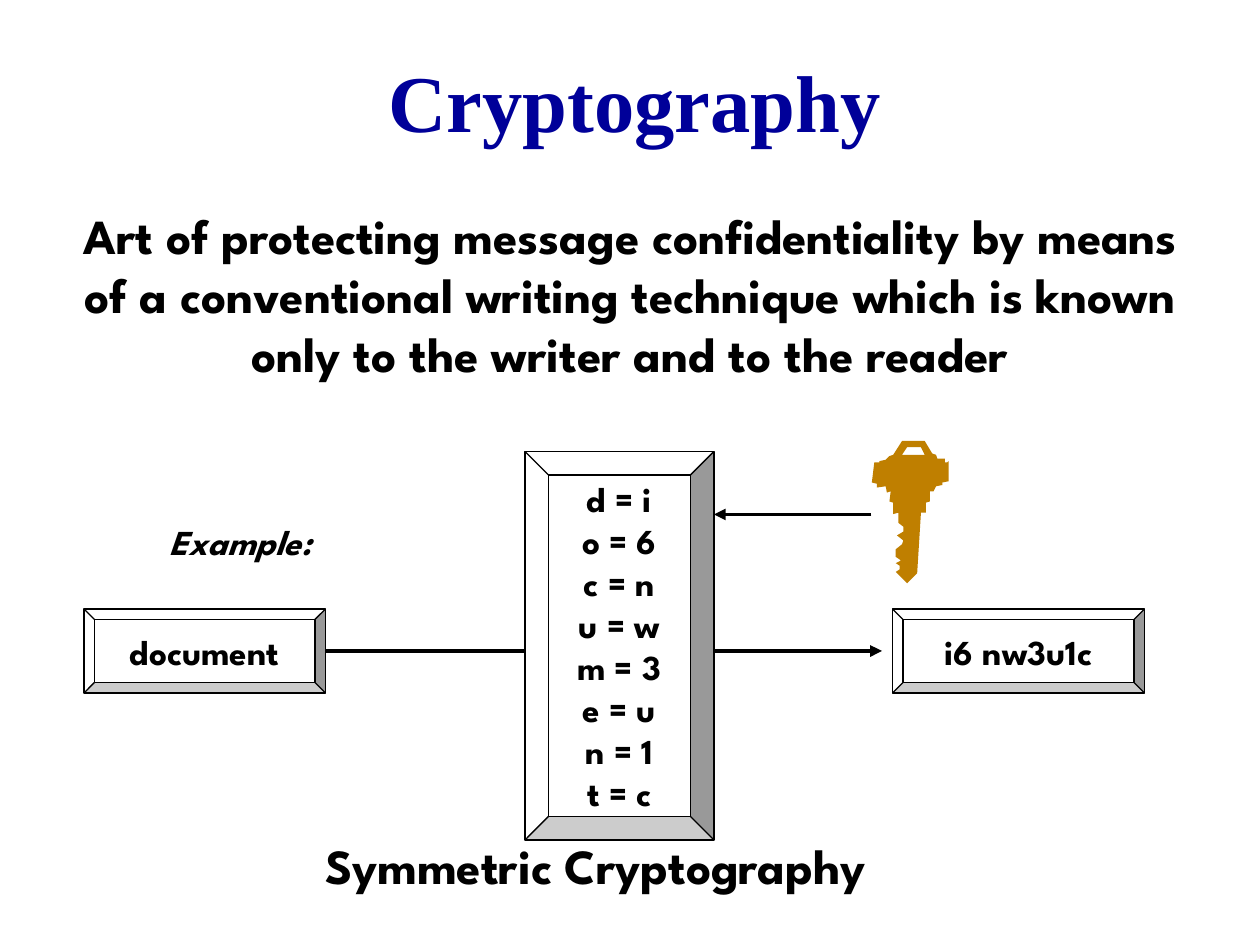
from lxml import etree
from pptx import Presentation
from pptx.dml.color import RGBColor
from pptx.enum.shapes import MSO_CONNECTOR, MSO_SHAPE
from pptx.enum.text import MSO_ANCHOR, MSO_AUTO_SIZE, PP_ALIGN
from pptx.oxml.ns import qn
from pptx.util import Pt

BLACK = RGBColor(0x00, 0x00, 0x00)
WHITE = RGBColor(0xFF, 0xFF, 0xFF)
NAVY = RGBColor(0x00, 0x00, 0x99)
GOLD = RGBColor(0xBF, 0x7F, 0x00)
LEFT, CENTER = PP_ALIGN.LEFT, PP_ALIGN.CENTER
TOP, MIDDLE = MSO_ANCHOR.TOP, MSO_ANCHOR.MIDDLE
NO_FIT = MSO_AUTO_SIZE.NONE
STRAIGHT, BEVEL = MSO_CONNECTOR.STRAIGHT, MSO_SHAPE.BEVEL


def write(sp, text, size=20, font="League Spartan", color=BLACK, italic=False,
          align=CENTER, anchor=TOP, wrap=False):
    """Fill a shape with text, one paragraph per line."""
    tf = sp.text_frame
    tf.auto_size = NO_FIT
    tf.word_wrap = wrap
    tf.vertical_anchor = anchor
    for i, line in enumerate(text.split("\n")):
        p = tf.add_paragraph() if i else tf.paragraphs[0]
        p.alignment = align
        r = p.add_run()
        r.text = line
        r.font.size = Pt(size)
        r.font.name = font
        r.font.bold = True
        r.font.italic = italic
        r.font.color.rgb = color


prs = Presentation()
prs.slide_width, prs.slide_height = Pt(720), Pt(540)
s = prs.slides.add_slide(prs.slide_layouts[5])

# Title
title = s.shapes.title
title.left, title.top, title.width, title.height = Pt(214.6), Pt(26), Pt(296), Pt(62.6)
write(title, "Cryptography", size=46, font="Times New Roman", color=NAVY)

# Key, outlined on a grid of 0.72 pt; the hole in its bow is part of the outline
KEY = [
    (24, 0), (42, 0), (39, 5), (28, 5), (24, 11), (42, 11), (39, 5), (42, 0),
    (48, 10), (51, 11), (52, 14), (58, 14), (58, 17), (60, 17), (61, 16), (61, 32),
    (56, 33), (56, 35), (51, 36), (49, 40), (46, 40), (46, 48), (43, 49), (43, 57),
    (39, 57), (36, 105), (28, 113), (19, 104), (22, 102), (22, 99), (19, 97),
    (23, 95), (22, 94), (19, 92), (19, 86), (24, 82), (25, 79), (20, 75), (25, 72),
    (25, 68), (21, 65), (21, 57), (17, 58), (17, 49), (14, 48), (15, 40), (12, 41),
    (11, 36), (4, 37), (4, 34), (0, 33), (2, 17), (6, 17), (6, 16), (11, 15),
    (12, 14), (14, 12), (17, 11),
]
outline = s.shapes.build_freeform(*KEY[0], scale=Pt(0.72))
outline.add_line_segments(KEY[1:], close=True)
key = outline.convert_to_shape(Pt(498.2), Pt(252))
key.shadow.inherit = False
key.fill.solid()
key.fill.fore_color.rgb = GOLD
key.line.fill.background()

# Arrows: document to cipher text (behind the table box), key to table
for x1, x2, y in [(186, 504, 372), (498, 408, 294)]:
    arrow = s.shapes.add_connector(STRAIGHT, Pt(x1), Pt(y), Pt(x2), Pt(y))
    arrow.line.color.rgb = BLACK
    arrow.line.width = Pt(2.25)
    etree.SubElement(arrow.line._get_or_add_ln(), qn("a:tailEnd"), type="triangle")
    etree.SubElement(arrow._element.spPr, qn("a:effectLst"))

# Bevelled boxes: plain text, substitution table, cipher text
BOXES = [
    ("document", 48, 348, 138, 48),
    ("d = i\no = 6\nc = n\nu = w\nm = 3\ne = u\nn = 1\nt = c", 300, 258, 108, 222),
    ("i6 nw3u1c", 510, 348, 144, 48),
]
for text, x, y, w, h in BOXES:
    box = s.shapes.add_shape(BEVEL, Pt(x), Pt(y), Pt(w), Pt(h))
    box.shadow.inherit = False
    box.fill.solid()
    box.fill.fore_color.rgb = WHITE
    box.line.color.rgb = BLACK
    box.line.width = Pt(0.75)
    write(box, text, anchor=MIDDLE)

# Definition, example label and caption
DEFINITION = ("Art of protecting message confidentiality by means of a conventional "
              "writing technique which is known only to the writer and to the reader")
LABELS = [
    (DEFINITION, 30, 114, 660, 142, dict(size=28, wrap=True)),
    ("Example:", 90, 294, 114, 31, dict(italic=True, align=LEFT, wrap=True)),
    ("Symmetric Cryptography", 178.8, 474, 357, 41, dict(size=28, align=LEFT)),
]
for text, x, y, w, h, style in LABELS:
    write(s.shapes.add_textbox(Pt(x), Pt(y), Pt(w), Pt(h)), text, **style)

prs.save("out.pptx")
